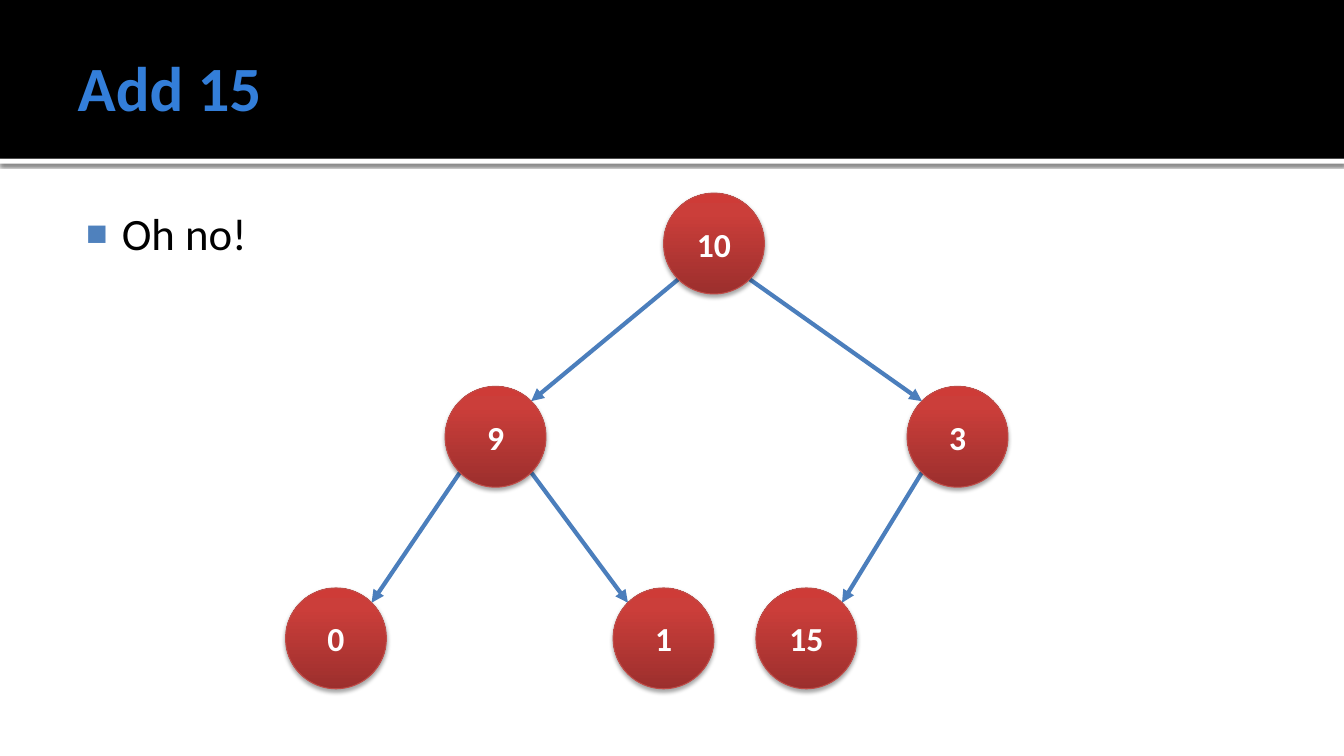
import math

import pptx
import pptx.dml.color
import pptx.enum.shapes
import pptx.enum.text
import pptx.oxml
import pptx.oxml.ns
import pptx.util

# Content: lengths in px, 96 to the inch
TITLE = "Add 15"
REMARK = "Oh no!"
NODES = {  # value: left, top
    "10": (632, 184),
    "9": (424, 368), "3": (864, 368),
    "0": (272, 560), "1": (584, 560), "15": (720, 560),
}
EDGES = [("10", "9"), ("9", "0"), ("9", "1"), ("10", "3"), ("3", "15")]
NODE_SIZE = 96
NODE_STOPS = [(0, "9C2F2D"), (80, "CB3E3A"), (100, "CE3B37")]
WIDTH, HEIGHT, HEADER = 1280, 720, 151
FONT = "Calibri"

SHAPE = pptx.enum.shapes.MSO_SHAPE
ANCHOR = pptx.enum.text.MSO_ANCHOR
ALIGN = pptx.enum.text.PP_ALIGN
NS = pptx.oxml.ns.nsdecls("a")


def px(n):
    return pptx.util.Emu(round(n * 9525))


def rgb(code):
    return pptx.dml.color.RGBColor.from_string(code)


def add_shape(kind, x, y, w, h):
    sp = s.shapes.add_shape(kind, px(x), px(y), px(w), px(h))
    sp.shadow.inherit = False
    return sp


def add_bar(y, h, color):
    sp = add_shape(SHAPE.RECTANGLE, 0, y, WIDTH, h)
    sp.fill.solid()
    sp.fill.fore_color.rgb = rgb(color)
    sp.line.fill.background()
    return sp


def drop_shadow(sp, alpha, blur, dist):
    effects = sp._element.spPr.find(pptx.oxml.ns.qn("a:effectLst"))
    effects.append(pptx.oxml.parse_xml(
        f'<a:outerShdw {NS} blurRad="{pptx.util.Pt(blur)}" dist="{pptx.util.Pt(dist)}" '
        f'dir="5400000" rotWithShape="0"><a:srgbClr val="000000">'
        f'<a:alpha val="{alpha * 1000}"/></a:srgbClr></a:outerShdw>'))


def add_run(p, text, size, color, bold=False):
    r = p.add_run()
    r.text = text
    r.font.name, r.font.size, r.font.bold = FONT, pptx.util.Pt(size), bold
    r.font.color.rgb = rgb(color)


def add_text(x, y, w, h, insets, anchor):
    tf = s.shapes.add_textbox(px(x), px(y), px(w), px(h)).text_frame
    tf.word_wrap = True
    tf.vertical_anchor = anchor
    tf.margin_left, tf.margin_top, tf.margin_right, tf.margin_bottom = map(px, insets)
    return tf.paragraphs[0]


def add_edge(parent, child):
    """Arrow from a lower corner of the parent to the facing upper corner of the child."""
    reach = NODE_SIZE / 2 * math.sqrt(0.5)
    (x1, y1), (x2, y2) = [[n + NODE_SIZE / 2 for n in NODES[k]] for k in (parent, child)]
    side = math.copysign(reach, x2 - x1)
    line = s.shapes.add_connector(
        pptx.enum.shapes.MSO_CONNECTOR.STRAIGHT,
        px(x1 + side), px(y1 + reach), px(x2 - side), px(y2 - reach))
    line.line.color.rgb = rgb("4B7EBC")
    line.line.width = pptx.util.Pt(3)
    line.line._get_or_add_ln().append(
        pptx.oxml.parse_xml(f'<a:tailEnd {NS} type="triangle"/>'))
    line._element.spPr.append(pptx.oxml.parse_xml(f"<a:effectLst {NS}/>"))


def add_node(value, x, y):
    sp = add_shape(SHAPE.OVAL, x, y, NODE_SIZE, NODE_SIZE)
    sp.fill.gradient()
    sp.fill.gradient_angle = 90
    stops = sp._element.spPr.find(".//" + pptx.oxml.ns.qn("a:gsLst"))
    for stop in list(stops):
        stops.remove(stop)
    for pos, color in NODE_STOPS:
        stops.append(pptx.oxml.parse_xml(
            f'<a:gs {NS} pos="{pos * 1000}"><a:srgbClr val="{color}"/></a:gs>'))
    sp.line.color.rgb = rgb("BF4C48")
    sp.line.width = pptx.util.Pt(0.75)
    drop_shadow(sp, 35, 3.1, 1.8)
    tf = sp.text_frame
    tf.vertical_anchor = ANCHOR.MIDDLE
    p = tf.paragraphs[0]
    p.alignment = ALIGN.CENTER
    add_run(p, value, 24, "FFFFFF", True)


prs = pptx.Presentation()
prs.slide_width, prs.slide_height = px(WIDTH), px(HEIGHT)
s = prs.slides.add_slide(prs.slide_layouts[6])

# Header band
drop_shadow(add_bar(HEADER, 5, "FFFFFF"), 60, 2.5, 0.8)
add_bar(0, HEADER, "000000")

# Title and remark
p = add_text(64, 16, 1152, 132, (10, 5, 5, 5), ANCHOR.MIDDLE)
add_run(p, TITLE, 45, "337ED9", True)

p = add_text(64, 186, 1152, 486, (6, 10, 10, 5), ANCHOR.TOP)
pPr = p._p.get_or_add_pPr()
pPr.set("marL", str(px(46)))
pPr.set("indent", str(px(-34)))
for bullet in ('buClr {}><a:srgbClr val="4F81BD"/></a:buClr>',
               'buSzPct {} val="80000"/>',
               'buFont {} typeface="Arial"/>',
               'buChar {} char="■"/>'):
    pPr.append(pptx.oxml.parse_xml("<a:" + bullet.format(NS)))
add_run(p, REMARK, 32, "000000")

# Tree
for parent, child in EDGES:
    add_edge(parent, child)
for value, (x, y) in NODES.items():
    add_node(value, x, y)

prs.save("out.pptx")
